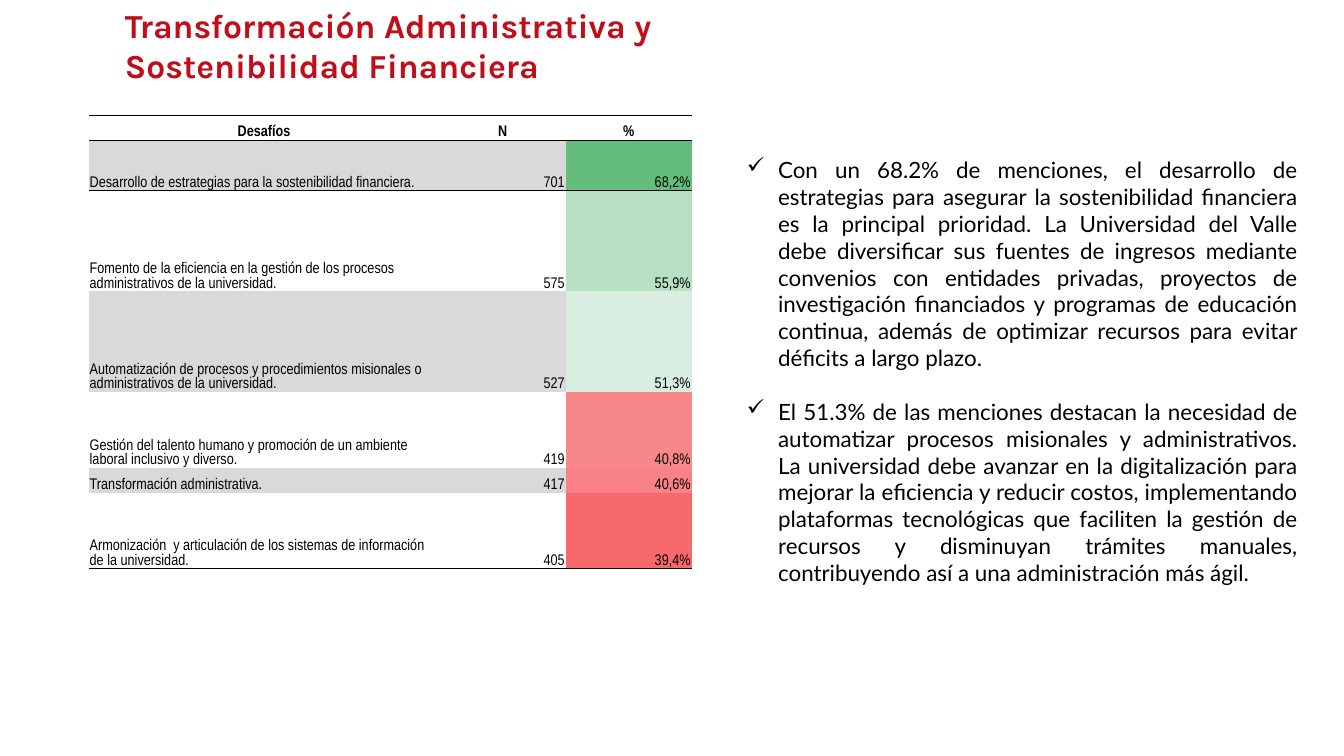
import pptx
import pptx.util
import pptx.dml.color
import pptx.enum.text
import pptx.oxml
import pptx.oxml.ns

Inches = pptx.util.Inches
Pt = pptx.util.Pt
RGBColor = pptx.dml.color.RGBColor
ALIGN = pptx.enum.text.PP_ALIGN
ANCHOR = pptx.enum.text.MSO_ANCHOR
qn = pptx.oxml.ns.qn

RED = RGBColor(0xC2, 0x0E, 0x1A)
BLACK = RGBColor(0, 0, 0)
GRAY = RGBColor(0xD9, 0xD9, 0xD9)
GREEN = RGBColor(0x63, 0xBE, 0x7B)
SOFT_GREEN = RGBColor(0xB8, 0xE1, 0xC4)
PALE_GREEN = RGBColor(0xD8, 0xEE, 0xE0)
SOFT_CORAL = RGBColor(0xF8, 0x87, 0x89)
MID_CORAL = RGBColor(0xF8, 0x82, 0x85)
CORAL = RGBColor(0xF8, 0x69, 0x6B)

NO_STYLE = "{2D5ABB26-0587-4C30-8999-92F81FD0307C}"
COLUMN_WIDTHS = [3.48, 1.25, 1.25]
HEADERS = ["Desafíos", "N", "%"]
CHALLENGES = [
    ("Desarrollo de estrategias para la sostenibilidad financiera.",
     "701", "68,2%", GREEN, 0.5),
    ("Fomento de la eficiencia en la gestión de los procesos administrativos de la universidad.",
     "575", "55,9%", SOFT_GREEN, 1),
    ("Automatización de procesos y procedimientos misionales o administrativos de la universidad.",
     "527", "51,3%", PALE_GREEN, 1),
    ("Gestión del talento humano y promoción de un ambiente laboral inclusivo y diverso.",
     "419", "40,8%", SOFT_CORAL, 0.75),
    ("Transformación administrativa.",
     "417", "40,6%", MID_CORAL, 0.25),
    ("Armonización  y articulación de los sistemas de información de la universidad.",
     "405", "39,4%", CORAL, 0.75),
]
FINDINGS = [
    "Con un 68.2% de menciones, el desarrollo de estrategias para asegurar la "
    "sostenibilidad financiera es la principal prioridad. La Universidad del Valle "
    "debe diversificar sus fuentes de ingresos mediante convenios con entidades "
    "privadas, proyectos de investigación financiados y programas de educación "
    "continua, además de optimizar recursos para evitar déficits a largo plazo.",
    "El 51.3% de las menciones destacan la necesidad de automatizar procesos "
    "misionales y administrativos. La universidad debe avanzar en la digitalización "
    "para mejorar la eficiencia y reducir costos, implementando plataformas "
    "tecnológicas que faciliten la gestión de recursos y disminuyan trámites "
    "manuales, contribuyendo así a una administración más ágil.",
]


def add_run(p, text, font, size, color, bold=False):
    r = p.add_run()
    r.text = text
    r.font.name = font
    r.font.size = Pt(size)
    r.font.bold = bold
    r.font.color.rgb = color


def add_text_box(s, left, top, width, height):
    box = s.shapes.add_textbox(Inches(left), Inches(top), Inches(width), Inches(height))
    tf = box.text_frame
    tf.word_wrap = True
    return tf


def add_title(s):
    tf = add_text_box(s, 1.14, 0, 5.45, 0.91)
    add_run(tf.paragraphs[0], "Transformación Administrativa y Sostenibilidad Financiera",
            "Karla", 24, RED, bold=True)


def add_check_bullet(p):
    pPr = p._p.get_or_add_pPr()
    pPr.set("marL", str(Inches(0.31)))
    pPr.set("indent", str(-Inches(0.31)))
    bullet = pptx.oxml.ns.nsdecls("a")
    pPr.append(pptx.oxml.parse_xml(f'<a:buChar {bullet} char="✓"/>'))


def add_findings(s):
    tf = add_text_box(s, 7.31, 1.5, 5.66, 4.68)
    for i, text in enumerate(FINDINGS):
        p = tf.add_paragraph() if i else tf.paragraphs[0]
        add_check_bullet(p)
        p.alignment = ALIGN.JUSTIFY
        if i:
            p.space_before = Pt(19.2)
        add_run(p, text, "Lato", 16, BLACK)


def add_border(cell, side):
    ns = pptx.oxml.ns.nsdecls("a")
    cell._tc.get_or_add_tcPr().append(pptx.oxml.parse_xml(
        f'<a:ln{side} {ns} w="{Pt(0.5)}"><a:solidFill>'
        f'<a:srgbClr val="{BLACK}"/></a:solidFill></a:ln{side}>'))


def fill_cell(cell, text, align, color=None, borders="", bold=False):
    cell.margin_left = cell.margin_right = cell.margin_top = Inches(0.01)
    cell.margin_bottom = 0
    cell.vertical_anchor = ANCHOR.BOTTOM
    for side in borders:
        add_border(cell, side)
    if color is None:
        cell.fill.background()
    else:
        cell.fill.solid()
        cell.fill.fore_color.rgb = color
    p = cell.text_frame.paragraphs[0]
    p.alignment = align
    add_run(p, text, "Arial Narrow", 11, BLACK, bold)


def add_challenges_table(s):
    heights = [0.25] + [row[-1] for row in CHALLENGES]
    table = s.shapes.add_table(
        len(heights), len(COLUMN_WIDTHS), Inches(0.88), Inches(1.14),
        Inches(sum(COLUMN_WIDTHS)), Inches(sum(heights))).table
    table.first_row = table.horz_banding = False
    table._tbl.tblPr.find(qn("a:tableStyleId")).text = NO_STYLE
    for column, width in zip(table.columns, COLUMN_WIDTHS):
        column.width = Inches(width)
    for row, height in zip(table.rows, heights):
        row.height = Inches(height)
    for c, header in enumerate(HEADERS):
        fill_cell(table.cell(0, c), header, ALIGN.CENTER, borders="TB", bold=True)
    for i, (name, count, share, share_color, _) in enumerate(CHALLENGES, 1):
        band = GRAY if i % 2 else None
        borders = {1: "T", len(CHALLENGES): "B"}.get(i, "")
        fill_cell(table.cell(i, 0), name, ALIGN.LEFT, band, borders)
        fill_cell(table.cell(i, 1), count, ALIGN.RIGHT, band, borders)
        fill_cell(table.cell(i, 2), share, ALIGN.RIGHT, share_color, borders)


def main():
    prs = pptx.Presentation()
    prs.slide_width = Inches(13.33)
    prs.slide_height = Inches(7.5)
    s = prs.slides.add_slide(prs.slide_layouts[6])
    add_title(s)
    add_challenges_table(s)
    add_findings(s)
    prs.save("out.pptx")


if __name__ == "__main__":
    main()
